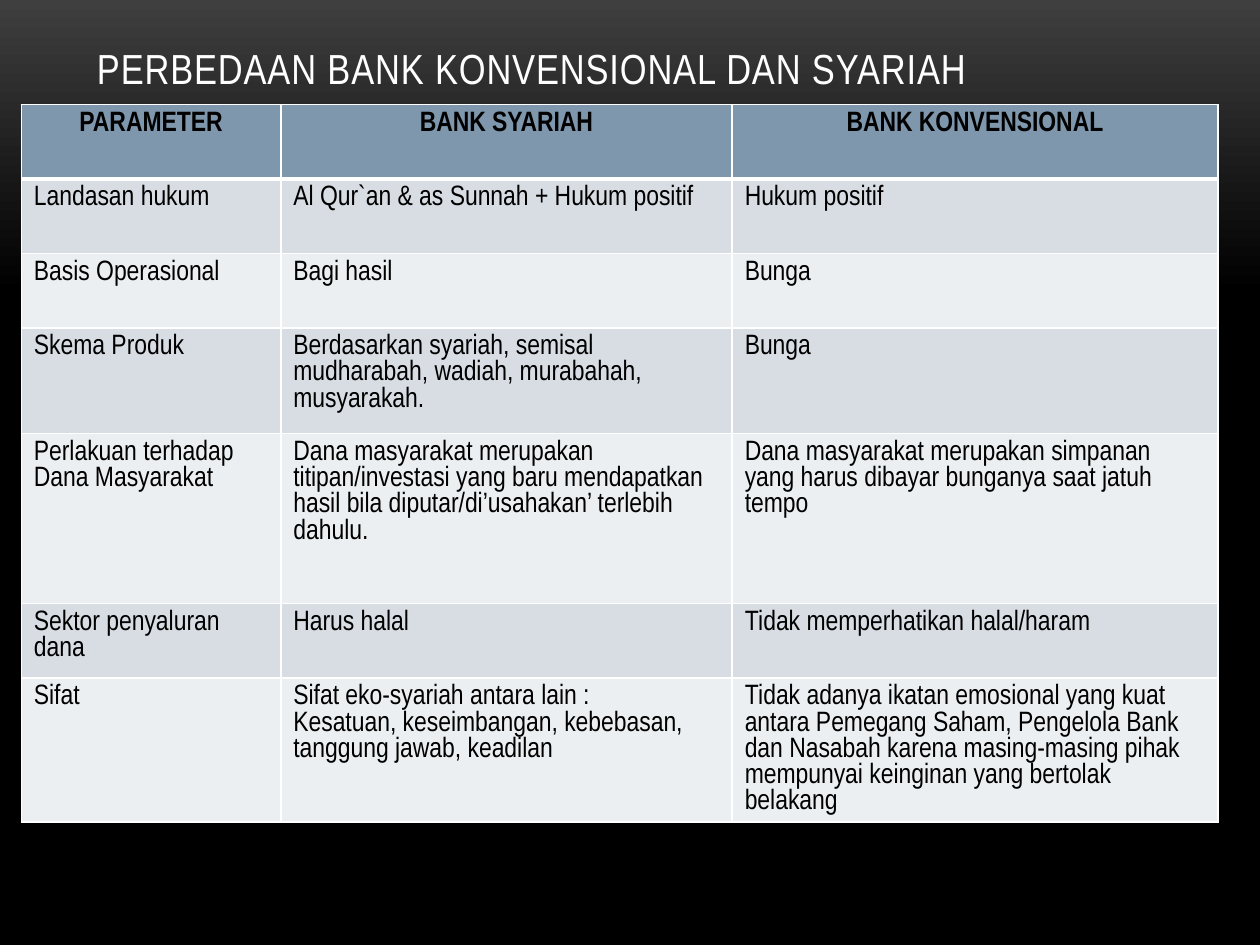
from dataclasses import dataclass

from lxml import etree
from pptx import Presentation
from pptx.dml.color import RGBColor
from pptx.enum.text import MSO_ANCHOR, PP_ALIGN
from pptx.oxml.ns import qn
from pptx.util import Cm, Pt

CENTER, LEFT = PP_ALIGN.CENTER, PP_ALIGN.LEFT
BOTTOM = MSO_ANCHOR.BOTTOM

FONT = "Arial Narrow"
WHITE = RGBColor(0xFF, 0xFF, 0xFF)
BLACK = RGBColor(0x00, 0x00, 0x00)
CHARCOAL = RGBColor(0x3F, 0x3F, 0x3F)
HEADER_FILL = RGBColor(0x7E, 0x97, 0xAD)
BANDS = (RGBColor(0xD8, 0xDD, 0xE3), RGBColor(0xEC, 0xEF, 0xF1))

COL_WIDTHS = (5.23, 9.1, 9.79)  # cm


@dataclass
class Row:
    parameter: str
    syariah: str
    konvensional: str
    height: float = 1.5  # cm


ROWS = [
    Row("PARAMETER", "BANK SYARIAH", "BANK KONVENSIONAL"),
    Row("Landasan hukum", "Al Qur`an & as Sunnah + Hukum positif", "Hukum positif"),
    Row("Basis Operasional", "Bagi hasil", "Bunga"),
    Row("Skema Produk",
        "Berdasarkan syariah, semisal mudharabah, wadiah, murabahah, musyarakah.",
        "Bunga", 2.13),
    Row("Perlakuan terhadap Dana Masyarakat",
        "Dana masyarakat merupakan titipan/investasi yang baru mendapatkan "
        "hasil bila diputar/di’usahakan’ terlebih dahulu.",
        "Dana masyarakat merupakan simpanan yang harus dibayar bunganya "
        "saat jatuh tempo", 3.43),
    Row("Sektor penyaluran dana", "Harus halal", "Tidak memperhatikan halal/haram"),
    Row("Sifat",
        "Sifat eko-syariah antara lain :\n"
        "Kesatuan, keseimbangan, kebebasan, tanggung jawab, keadilan",
        "Tidak adanya ikatan emosional yang kuat antara Pemegang Saham, "
        "Pengelola Bank dan Nasabah karena masing-masing pihak mempunyai "
        "keinginan yang bertolak belakang", 2.9),
]


def format_runs(tf, size: int, color: RGBColor, bold: bool, align) -> None:
    for p in tf.paragraphs:
        p.alignment = align
        for r in p.runs:
            r.font.name = FONT
            r.font.size = Pt(size)
            r.font.bold = bold
            r.font.color.rgb = color


def set_borders(cell, widths: dict[str, int]) -> None:
    tcPr = cell._tc.get_or_add_tcPr()
    for side, width in widths.items():
        ln = etree.SubElement(tcPr, qn(f"a:ln{side}"), w=str(Pt(width)))
        fill = etree.SubElement(ln, qn("a:solidFill"))
        etree.SubElement(fill, qn("a:srgbClr"), val=str(WHITE))


def paint_background(s) -> None:
    fill = s.background.fill
    fill.gradient()
    fill.gradient_angle = 270
    for stop, position, color in zip(fill.gradient_stops, (0, 0.31), (CHARCOAL, BLACK)):
        stop.position = position
        stop.color.rgb = color


def add_title(s, text: str) -> None:
    sp = s.shapes.title
    sp.left, sp.top, sp.width, sp.height = Cm(1.7), Cm(0.03), Cm(22.02), Cm(1.98)
    tf = sp.text_frame
    tf.text = text
    tf.vertical_anchor = BOTTOM
    format_runs(tf, 24, WHITE, False, LEFT)
    tf.paragraphs[0].runs[0]._r.get_or_add_rPr().set("spc", "50")


def add_comparison(s, rows: list[Row]) -> None:
    height = sum(row.height for row in rows)
    table = s.shapes.add_table(len(rows), len(COL_WIDTHS), Cm(0.43), Cm(2.11),
                               Cm(sum(COL_WIDTHS)), Cm(height)).table
    for col, width in zip(table.columns, COL_WIDTHS):
        col.width = Cm(width)
    for i, row in enumerate(rows):
        table.rows[i].height = Cm(row.height)
        header = i == 0
        # A thick rule separates the header from the body
        borders = {"L": 1, "R": 1, "T": 3 if i == 1 else 1, "B": 3 if header else 1}
        for j, text in enumerate((row.parameter, row.syariah, row.konvensional)):
            cell = table.cell(i, j)
            cell.text_frame.text = text
            format_runs(cell.text_frame, 16, BLACK, header, CENTER if header else LEFT)
            set_borders(cell, borders)
            cell.fill.solid()
            cell.fill.fore_color.rgb = HEADER_FILL if header else BANDS[(i - 1) % 2]


def main() -> None:
    prs = Presentation()
    prs.slide_width, prs.slide_height = Cm(25.4), Cm(19.05)
    s = prs.slides.add_slide(prs.slide_layouts[5])
    paint_background(s)
    add_title(s, "PERBEDAAN BANK KONVENSIONAL DAN SYARIAH")
    add_comparison(s, ROWS)
    prs.save("out.pptx")


if __name__ == "__main__":
    main()
